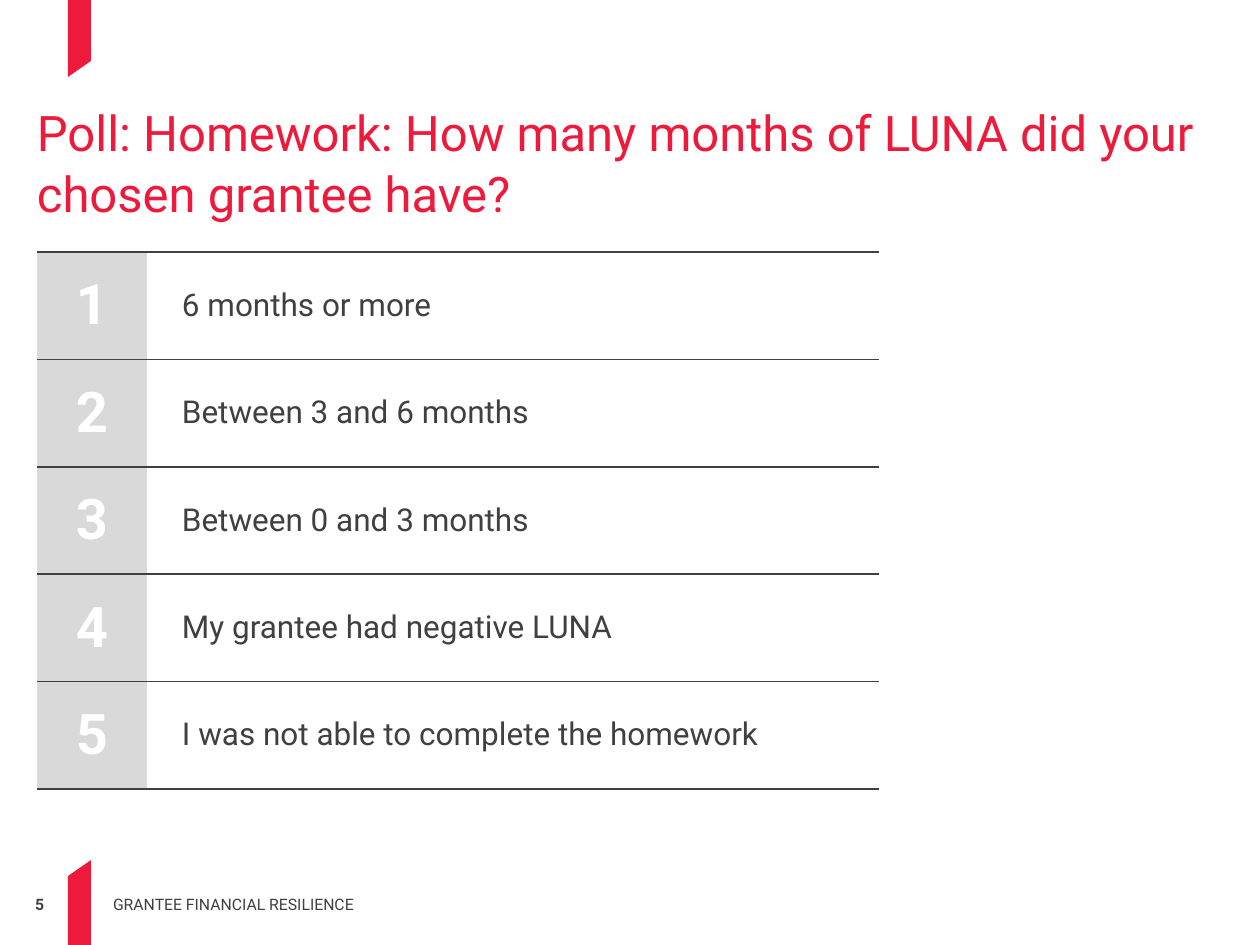
from pptx import Presentation
from pptx.dml.color import RGBColor as RGB
from pptx.enum.text import MSO_ANCHOR as Anc, PP_ALIGN as Al
from pptx.oxml import parse_xml
from pptx.oxml.ns import nsdecls
from pptx.util import Pt

PX = 914400 / 126
theme = {
    "red": RGB.from_string("ED1A3B"),
    "ink": RGB.from_string("404040"),
    "grey": RGB.from_string("D9D9D9"),
    "white": RGB.from_string("FFFFFF"),
    "font": "Roboto",
    "title": Pt(28), "num": Pt(32), "body": Pt(18), "foot": Pt(9),
}


def px(*vals):
    return [round(v * PX) for v in vals]


def write(frame, text, size, tint, bold=False, align=Al.LEFT):
    par = frame.paragraphs[0]
    par.alignment = align
    run = par.add_run()
    run.text = text
    look = {"name": theme["font"], "size": theme[size], "bold": bold}
    for key, val in look.items():
        setattr(run.font, key, val)
    run.font.color.rgb = theme[tint]
    return par


deck = Presentation()
deck.slide_width, deck.slide_height = px(1260, 945)
slide = deck.slides.add_slide(deck.slide_layouts[6])
shapes = slide.shapes

left, right = 68, 91
ribbons = [
    [(right, 61), (right, 0), (left, 0), (left, 77)],
    [(left, 876), (left, 945), (right, 945), (right, 860)],
]
for pts in ribbons:
    pen = shapes.build_freeform(*pts[0], scale=PX)
    pen.add_line_segments(pts[1:], close=True)
    ribbon = pen.convert_to_shape()
    ribbon.shadow.inherit = False
    ribbon.fill.solid()
    ribbon.fill.fore_color.rgb = theme["red"]
    ribbon.line.fill.background()

labels = [
    ((0, 895, 44, 19), Anc.TOP, 1, ("5", "foot", "ink", True, Al.RIGHT)),
    ((37, 95, 1187, 132), Anc.MIDDLE, 1.05,
     ("Poll: Homework: How many months of LUNA did your chosen grantee have?",
      "title", "red")),
    ((113, 876, 437, 38), Anc.BOTTOM, 1,
     ("GRANTEE FINANCIAL RESILIENCE", "foot", "ink")),
]
for box, anchor, space, text in labels:
    frame = shapes.add_textbox(*px(*box)).text_frame
    form = {"word_wrap": True, "vertical_anchor": anchor, "margin_left": 0,
            "margin_right": 0, "margin_top": 0, "margin_bottom": 0}
    for key, val in form.items():
        setattr(frame, key, val)
    write(frame, *text).line_spacing = space

answers = [
    "6 months or more",
    "Between 3 and 6 months",
    "Between 0 and 3 months",
    "My grantee had negative LUNA",
    "I was not able to complete the homework",
]
widths = px(110, 732)
grid = shapes.add_table(len(answers), 2, *px(37, 252, 842, 537)).table
for flag in ("first_row", "horz_banding"):
    setattr(grid, flag, False)
for col, width in zip(grid.columns, widths):
    col.width = width

rule = f'<a:solidFill><a:srgbClr val="{theme["ink"]}"/></a:solidFill>'
edges = {"lnL": "<a:noFill/>", "lnR": "<a:noFill/>", "lnT": rule, "lnB": rule}
for row, answer in enumerate(answers):
    num, body = grid.cell(row, 0), grid.cell(row, 1)
    write(num.text_frame, str(row + 1), "num", "white", True, Al.CENTER)
    write(body.text_frame, answer, "body", "ink")
    num.fill.solid()
    num.fill.fore_color.rgb = theme["grey"]
    body.fill.background()
    for cell, inset in ((num, 18), (body, 35)):
        form = dict(zip(
            ("margin_left", "margin_right", "margin_top", "margin_bottom"),
            px(inset, 18, 6, 6)))
        form["vertical_anchor"] = Anc.MIDDLE
        for key, val in form.items():
            setattr(cell, key, val)
        props = cell._tc.get_or_add_tcPr()
        for spot, (tag, fill) in enumerate(edges.items()):
            props.insert(spot, parse_xml(
                f'<a:{tag} {nsdecls("a")} w="12700">{fill}</a:{tag}>'))

deck.save("out.pptx")
